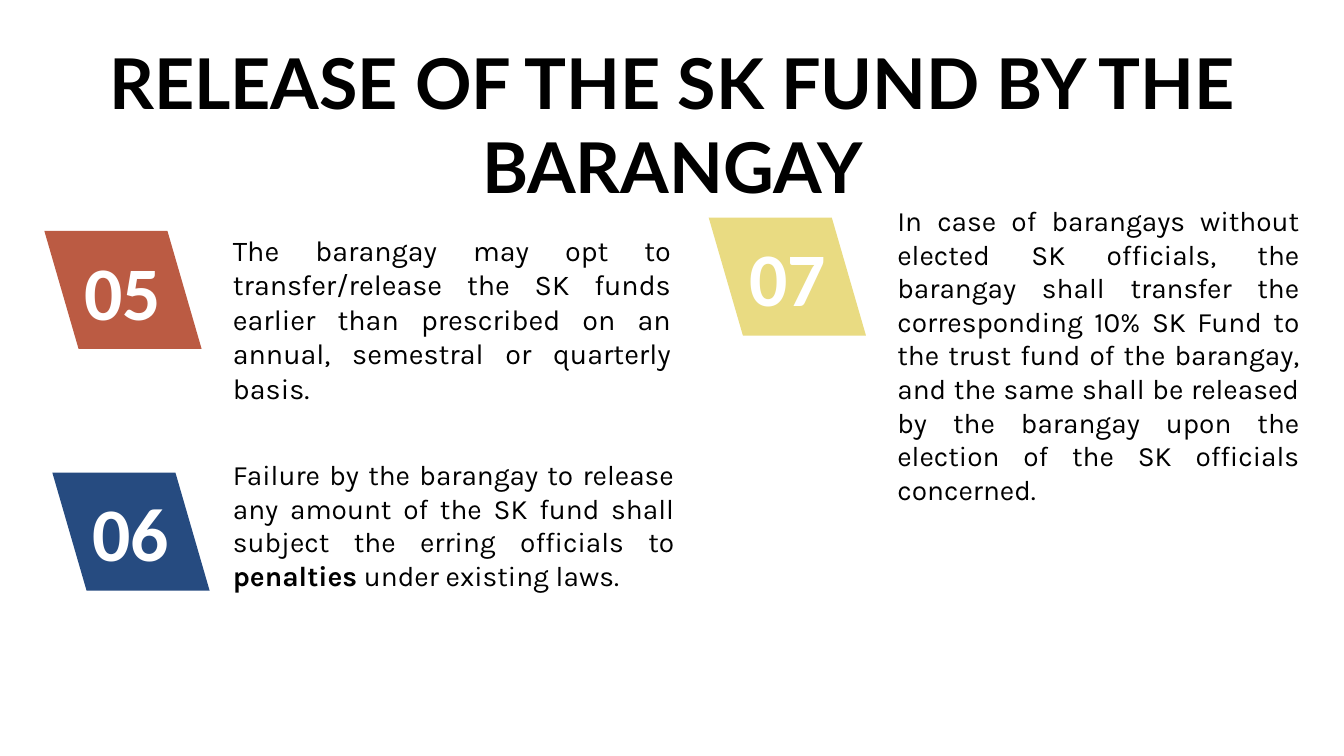
"""Build the slide on the release of the SK fund by the barangay."""
from dataclasses import dataclass

from pptx import Presentation
from pptx.dml.color import RGBColor
from pptx.enum import shapes, text
from pptx.util import Inches, Pt


@dataclass(frozen=True)
class Theme:
    """Colours, fonts and type sizes of the slide."""
    ink: str = "000000"
    white: str = "FFFFFF"
    red: str = "BB5B43"
    blue: str = "264B80"
    yellow: str = "E9DB82"
    title_font: str = "Lato"
    number_font: str = "Calibri"
    body_font: str = "Karla"
    title_size: float = 50
    number_size: float = 54
    body_size: float = 20
    first_body_size: float = 20.5


THEME = Theme()
BADGE_SIZE = (1.56, 1.17)

ITEMS = [
    ("05", THEME.red, (0.44, 2.29), (2.31, 2.26, 4.35, 1.14), THEME.first_body_size,
     [("The barangay may opt to transfer/release the SK funds earlier than "
       "prescribed on an annual, semestral or quarterly basis.", False)]),
    ("06", THEME.blue, (0.52, 4.69), (2.31, 4.49, 4.38, 1.45), THEME.body_size,
     [("Failure by the barangay to release any amount of the SK fund shall "
       "subject the erring officials to ", False),
      ("penalties", True),
      (" under existing laws.", False)]),
    ("07", THEME.yellow, (7.03, 2.16), (8.9, 1.97, 3.99, 2.46), THEME.body_size,
     [("In case of barangays without elected SK officials, the barangay shall "
       "transfer the corresponding 10% SK Fund to the trust fund of the barangay, "
       "and the same shall be released by the barangay upon the election of the "
       "SK officials concerned.", False)]),
]


def set_margins(tf, side, edge):
    """Set equal side margins and equal top and bottom margins."""
    tf.margin_left = tf.margin_right = Inches(side)
    tf.margin_top = tf.margin_bottom = Inches(edge)


def add_runs(p, runs, font, size, color):
    """Add (words, bold) runs in one font, size and colour."""
    for words, bold in runs:
        r = p.add_run()
        r.text = words
        r.font.name = font
        r.font.size = Pt(size)
        r.font.bold = bold
        r.font.color.rgb = RGBColor.from_string(color)


def add_text(s, box, runs, font, size, align):
    """Add a wrapped text box and return its text frame."""
    tf = s.shapes.add_textbox(*map(Inches, box)).text_frame
    tf.word_wrap = True
    tf.paragraphs[0].alignment = align
    add_runs(tf.paragraphs[0], runs, font, size, THEME.ink)
    return tf


def add_badge(s, number, fill, corner):
    """Add a left-leaning parallelogram with a number."""
    sp = s.shapes.add_shape(shapes.MSO_SHAPE.PARALLELOGRAM,
                            *map(Inches, corner + BADGE_SIZE))
    sp.adjustments[0] = 0.29
    sp.element.spPr.xfrm.set("flipH", "1")
    sp.shadow.inherit = False
    sp.fill.solid()
    sp.fill.fore_color.rgb = RGBColor.from_string(fill)
    sp.line.fill.background()
    tf = sp.text_frame
    tf.word_wrap = False
    tf.vertical_anchor = text.MSO_ANCHOR.MIDDLE
    set_margins(tf, 0, 0)
    p = tf.paragraphs[0]
    p.alignment = text.PP_ALIGN.CENTER
    add_runs(p, [(number, True)], THEME.number_font, THEME.number_size, THEME.white)


def add_body(s, box, runs, size):
    """Add a justified paragraph beside a badge."""
    tf = add_text(s, box, runs, THEME.body_font, size, text.PP_ALIGN.JUSTIFY)
    set_margins(tf, 0, 0.05)
    tf.auto_size = text.MSO_AUTO_SIZE.SHAPE_TO_FIT_TEXT


def add_title(s, words):
    """Add the centred slide title."""
    tf = add_text(s, (0.17, 0.55, 13, 1.36), [(words, True)],
                  THEME.title_font, THEME.title_size, text.PP_ALIGN.CENTER)
    tf.vertical_anchor = text.MSO_ANCHOR.MIDDLE
    set_margins(tf, 0.07, 0.04)


def main():
    """Build and save the slide."""
    prs = Presentation()
    prs.slide_width, prs.slide_height = Inches(13.33), Inches(7.5)
    s = prs.slides.add_slide(prs.slide_layouts[6])
    for number, fill, corner, box, size, runs in ITEMS:
        add_badge(s, number, fill, corner)
        add_body(s, box, runs, size)
    add_title(s, "RELEASE OF THE SK FUND BY THE BARANGAY")
    prs.save("out.pptx")


if __name__ == "__main__":
    main()
